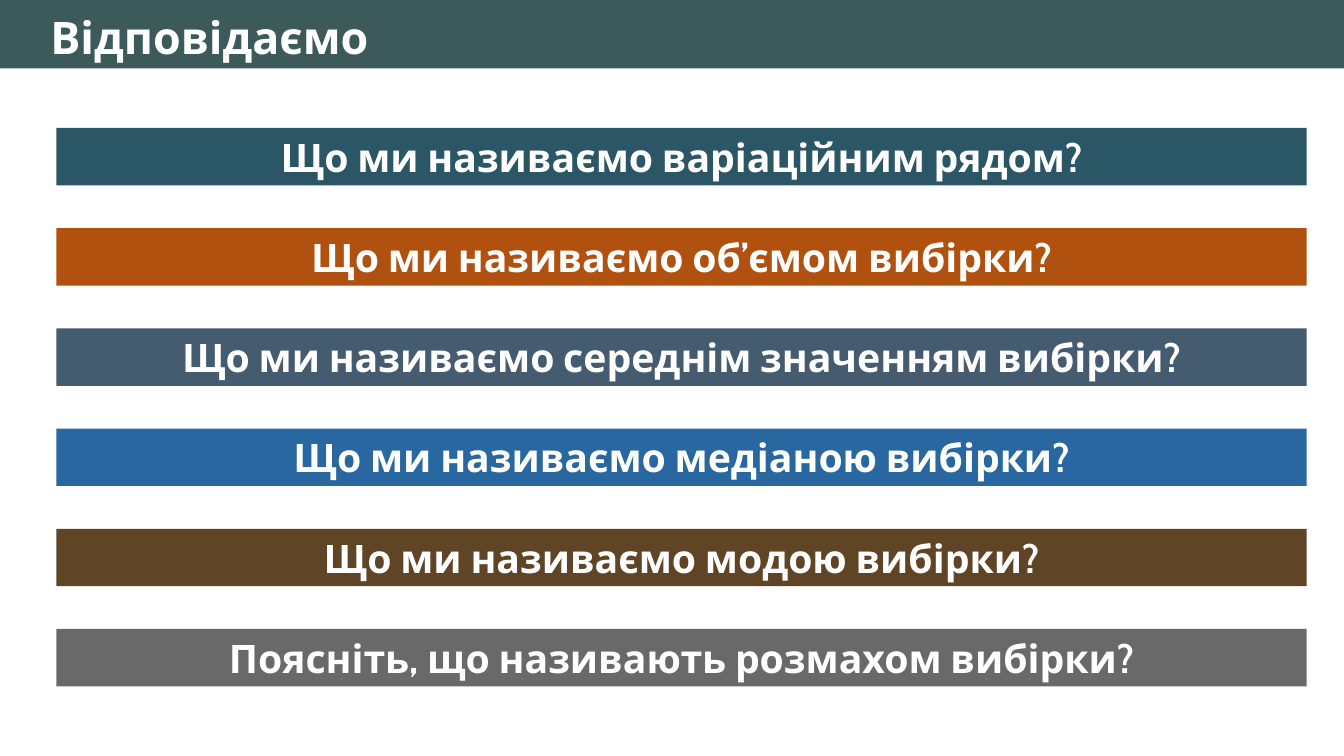
from dataclasses import dataclass

from pptx import Presentation
from pptx.dml.color import RGBColor as Rgb
from pptx.enum.shapes import MSO_SHAPE as Shape
from pptx.enum.text import MSO_ANCHOR as Anchor, MSO_AUTO_SIZE as Fit, PP_ALIGN as Align
from pptx.util import Inches, Pt


@dataclass(frozen=True)
class Theme:
    font: str = "Cabin"
    text: str = "FFFFFF"
    band: str = "3C5A59"
    head: int = 32
    body: int = 28


THEME = Theme()
WIDTH, HEIGHT = 13.33, 7.5
ITEMS = [
    ("Що ми називаємо варіаційним рядом?", "2B5666"),
    ("Що ми називаємо об’ємом вибірки?", "B1510F"),
    ("Що ми називаємо середнім значенням вибірки?", "455B6F"),
    ("Що ми називаємо медіаною вибірки?", "2867A0"),
    ("Що ми називаємо модою вибірки?", "604426"),
    ("Поясніть, що називають розмахом вибірки?", "696969"),
]


def apply(item, form):
    for name, value in form.items():
        setattr(item, name, value)


def place(shape, box):
    sides = ("left", "top", "width", "height")
    apply(shape, dict(zip(sides, map(Inches, box))))


def write(shape, text, size, align):
    frame = shape.text_frame
    frame.text = text
    apply(frame, {
        "word_wrap": True,
        "auto_size": Fit.NONE,
        "vertical_anchor": Anchor.MIDDLE,
        "margin_left": Inches(0.1),
        "margin_right": Inches(0.1),
        "margin_top": Inches(0.05),
        "margin_bottom": Inches(0.05),
    })
    line = frame.paragraphs[0]
    line.alignment = align
    font = line.runs[0].font
    apply(font, {"name": THEME.font, "size": Pt(size), "bold": True})
    font.color.rgb = Rgb.from_string(THEME.text)


def add_bar(slide, box, color):
    bar = slide.shapes.add_shape(Shape.RECTANGLE, *map(Inches, box))
    bar.shadow.inherit = False
    bar.fill.solid()
    bar.fill.fore_color.rgb = Rgb.from_string(color)
    bar.line.fill.background()
    return bar


def add_head(slide, box, text):
    left, top, width, height = box
    band = add_bar(slide, box, THEME.band)
    title = slide.shapes.title
    # Keep the band behind the title
    title._element.addprevious(band._element)
    place(title, (left + 0.4, top + 0.04, width - 0.95, height - 0.04))
    write(title, text, THEME.head, Align.LEFT)


def add_list(slide, box, items, bar=0.57):
    left, top, width, height = box
    step = (height - bar) / (len(items) - 1)
    for row, (text, color) in enumerate(items):
        shape = add_bar(slide, (left, top + row * step, width, bar), color)
        write(shape, text, THEME.body, Align.CENTER)


def main():
    deck = Presentation()
    apply(deck, {"slide_width": Inches(WIDTH), "slide_height": Inches(HEIGHT)})
    slide = deck.slides.add_slide(deck.slide_layouts.get_by_name("Title Only"))

    # Heading
    add_head(slide, (0, 0, WIDTH, 0.68), "Відповідаємо")
    # Questions
    add_list(slide, (0.56, 1.27, 12.4, 5.54), ITEMS)

    deck.save("out.pptx")


if __name__ == "__main__":
    main()
